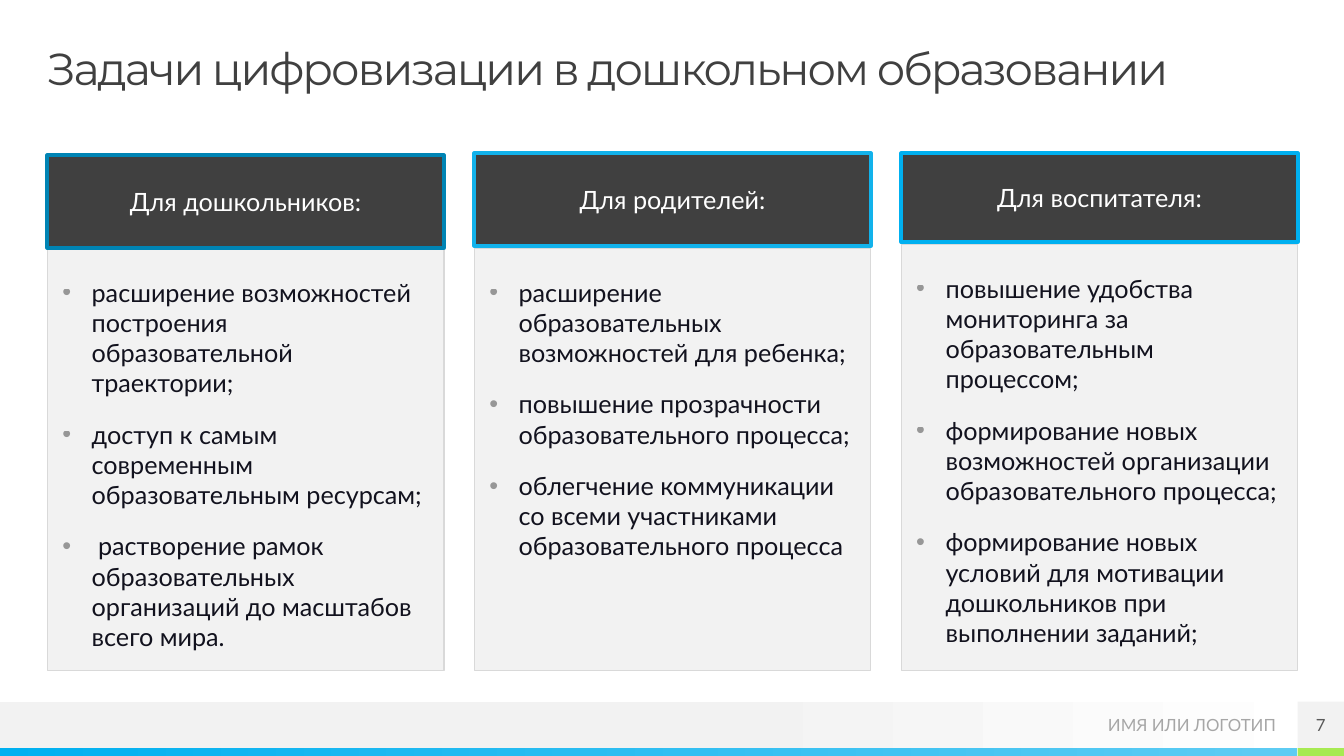
import dataclasses

import lxml.etree
import pptx
import pptx.dml.color
import pptx.enum.shapes
import pptx.enum.text
import pptx.oxml.ns
import pptx.util

Cm = pptx.util.Cm
Pt = pptx.util.Pt
ALIGN = pptx.enum.text.PP_ALIGN
ANCHOR = pptx.enum.text.MSO_ANCHOR


@dataclasses.dataclass(frozen=True)
class Theme:
    title_font: str = "Montserrat"
    text_font: str = "Lato"
    title_size: int = 32
    text_size: int = 18
    footer_size: int = 12
    dark: str = "404040"
    ink: str = "12121E"
    white: str = "FFFFFF"
    panel: str = "F2F2F2"
    panel_line: str = "D9D9D9"
    footer_text: str = "A6A6A6"
    number_text: str = "595959"
    blue: str = "00B0F0"
    light_blue: str = "5ECCF3"
    green: str = "A7EA52"


THEME = Theme()
WIDTH, HEIGHT = 33.87, 19.05
MARGIN = 1.19
COLUMN_WIDTH, COLUMN_PITCH = 10, 10.76
COLUMN_BOTTOM = 16.89

COLUMNS = [
    (1, "Для дошкольников:", "0084B4", 3.91, 2.34, 6.27, [
        "расширение возможностей построения образовательной траектории;",
        "доступ к самым современным образовательным ресурсам;",
        " растворение рамок образовательных организаций до масштабов всего мира.",
    ]),
    (2, "Для родителей:", "12B2EB", 3.86, 2.34, 6.27, [
        "расширение образовательных возможностей для ребенка;",
        "повышение прозрачности образовательного процесса;",
        "облегчение коммуникации со всеми участниками образовательного процесса",
    ]),
    (4, "Для воспитателя:", "00B0F0", 3.86, 2.24, 6.17, [
        "повышение удобства мониторинга за образовательным процессом;",
        "формирование новых возможностей организации образовательного процесса;",
        "формирование новых условий для мотивации дошкольников при выполнении заданий;",
    ]),
]


def rgb(value):
    return pptx.dml.color.RGBColor.from_string(value)


def place(shape, box):
    shape.left, shape.top, shape.width, shape.height = map(Cm, box)


def paint(shape, fill, line=None, line_width=0):
    shape.fill.solid()
    shape.fill.fore_color.rgb = rgb(fill)
    if line:
        shape.line.color.rgb = rgb(line)
        shape.line.width = Pt(line_width)
    else:
        shape.line.fill.background()


def add_rect(slide, box, fill, line=None, line_width=0):
    rect = slide.shapes.add_shape(
        pptx.enum.shapes.MSO_SHAPE.RECTANGLE, *map(Cm, box))
    rect.shadow.inherit = False
    paint(rect, fill, line, line_width)
    return rect


def add_gradient(slide, box, stops):
    band = add_rect(slide, box, THEME.white)
    band.fill.gradient()
    band.fill.gradient_angle = 0
    for stop, (position, color) in zip(band.fill.gradient_stops, stops):
        stop.position = position
        stop.color.rgb = rgb(color)


def set_frame(shape, anchor, margins=(0, 0, 0, 0)):
    frame = shape.text_frame
    frame.word_wrap = True
    frame.auto_size = pptx.enum.text.MSO_AUTO_SIZE.NONE
    frame.vertical_anchor = anchor
    (frame.margin_left, frame.margin_top,
     frame.margin_right, frame.margin_bottom) = map(Cm, margins)
    return frame


def write(paragraph, text, size, color, align, font=THEME.text_font):
    paragraph.alignment = align
    run = paragraph.add_run()
    run.text = text
    run.font.name = font
    run.font.size = Pt(size)
    run.font.bold = False
    run.font.color.rgb = rgb(color)
    return run


def add_bullet(paragraph):
    qn = pptx.oxml.ns.qn
    properties = paragraph._p.get_or_add_pPr()
    properties.set("marL", str(Cm(0.74)))
    properties.set("indent", str(-Cm(0.74)))
    bullet_color = lxml.etree.SubElement(properties, qn("a:buClr"))
    color = lxml.etree.SubElement(bullet_color, qn("a:srgbClr"), val=THEME.dark)
    lxml.etree.SubElement(color, qn("a:alpha"), val="50000")
    lxml.etree.SubElement(properties, qn("a:buFont"), typeface="Arial")
    lxml.etree.SubElement(properties, qn("a:buChar"), char="•")


def build_footer(slide, box):
    left, top, width, height = box
    strip = 0.2
    corner = 1.17
    band = height - strip
    add_gradient(slide, (left, top, width, band),
                 [(0.53, THEME.panel), (1, THEME.white)])
    add_gradient(slide, (left, top + band, width - corner, strip),
                 [(0, THEME.blue), (1, THEME.light_blue)])
    add_rect(slide, (left + width - corner, top + band, corner, strip), THEME.green)

    owner_width = 5.7
    owner_left = left + width - corner - 0.54 - owner_width
    owner = slide.shapes.add_textbox(
        *map(Cm, (owner_left, top, owner_width, band)))
    write(set_frame(owner, ANCHOR.MIDDLE).paragraphs[0], "ИМЯ ИЛИ ЛОГОТИП",
          THEME.footer_size, THEME.footer_text, ALIGN.RIGHT)

    number = add_rect(slide, (left + width - corner, top, corner, band), THEME.panel)
    write(set_frame(number, ANCHOR.MIDDLE).paragraphs[0], "7",
          THEME.footer_size, THEME.number_text, ALIGN.CENTER)


def build_title(slide, box):
    title = slide.shapes.title
    place(title, box)
    paragraph = set_frame(title, ANCHOR.TOP).paragraphs[0]
    paragraph.line_spacing = 0.9
    run = write(paragraph, "Задачи цифровизации в дошкольном образовании",
                THEME.title_size, THEME.dark, ALIGN.LEFT, THEME.title_font)
    run._r.get_or_add_rPr().set("spc", "-150")


def build_column(slide, box, tasks, heading, accent, heading_height, list_top, items):
    left, top, width, height = box
    place(tasks, (left, list_top, width, top + height - list_top))
    paint(tasks, THEME.panel, THEME.panel_line, 0.75)
    frame = set_frame(tasks, ANCHOR.TOP, (0.38, 0.71, 0.38, 0))
    for position, item in enumerate(items):
        paragraph = frame.add_paragraph() if position else frame.paragraphs[0]
        paragraph.line_spacing = 1.0
        paragraph.space_before = Pt(10 if position else 0)
        paragraph.space_after = Pt(5)
        add_bullet(paragraph)
        write(paragraph, item, THEME.text_size, THEME.ink, ALIGN.LEFT)

    header = add_rect(slide, (left, top, width, heading_height), THEME.dark, accent, 2.5)
    header_frame = set_frame(header, ANCHOR.MIDDLE, (0.3, 0.1, 0.3, 0.1))
    write(header_frame.paragraphs[0], heading, THEME.text_size, THEME.white, ALIGN.CENTER)


def main():
    deck = pptx.Presentation()
    deck.slide_width, deck.slide_height = Cm(WIDTH), Cm(HEIGHT)
    slide = deck.slides.add_slide(deck.slide_layouts.get_by_name("Comparison"))
    bodies = {body.placeholder_format.idx: body for body in slide.placeholders}

    build_footer(slide, (0, 17.68, WIDTH, HEIGHT - 17.68))
    build_title(slide, (MARGIN, MARGIN, 31.5, 1.19))
    for index, (idx, heading, accent, top, header, list_top, items) in enumerate(COLUMNS):
        box = (MARGIN + index * COLUMN_PITCH, top, COLUMN_WIDTH, COLUMN_BOTTOM - top)
        build_column(slide, box, bodies[idx], heading, accent, header, list_top, items)

    unused = bodies[3]._element
    unused.getparent().remove(unused)
    deck.save("out.pptx")


if __name__ == "__main__":
    main()
